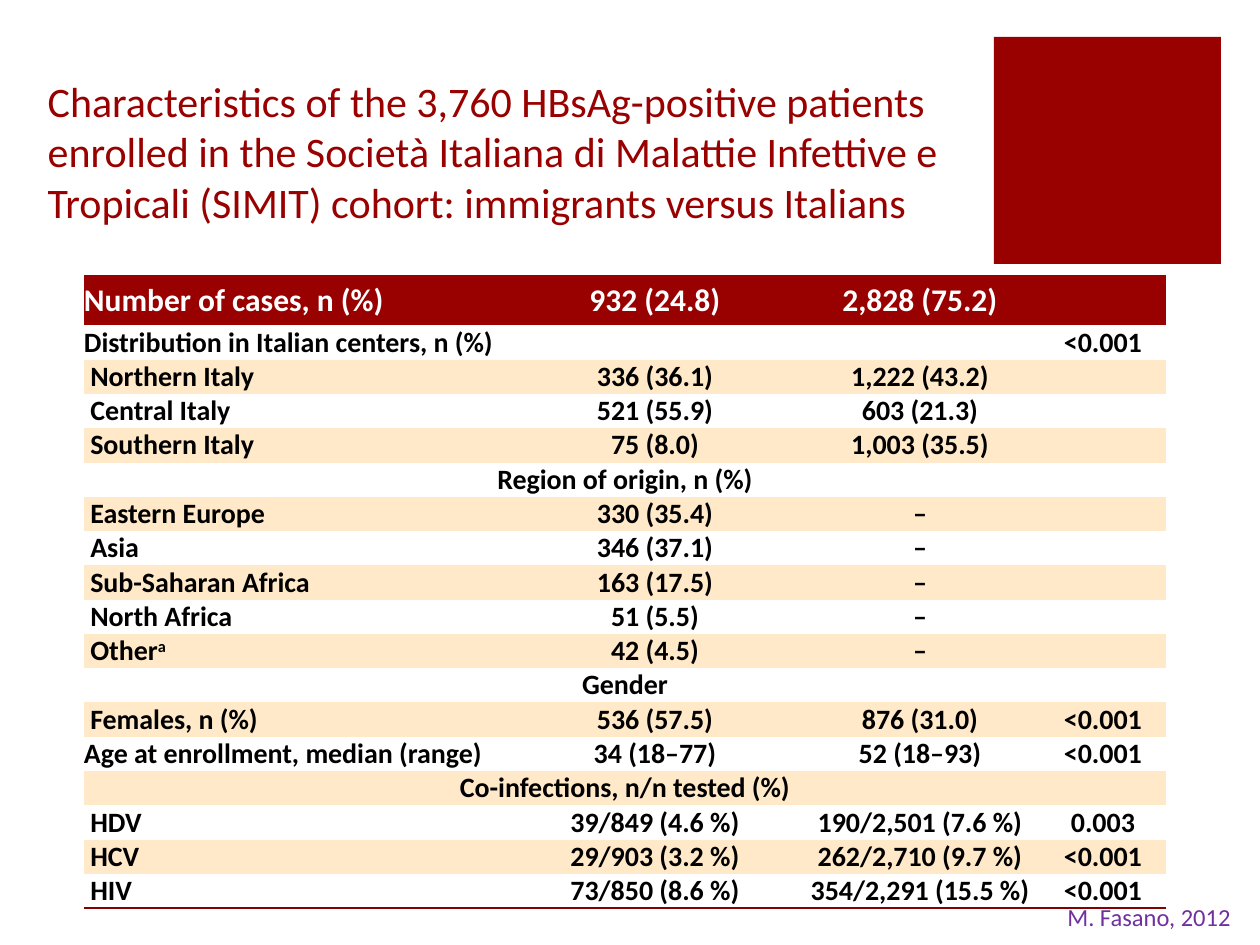
from dataclasses import dataclass
from typing import Any

from lxml import etree
from pptx import Presentation
from pptx import util as u
from pptx.dml.color import RGBColor
from pptx.enum import shapes, text
from pptx.oxml import ns

LEFT, MID = text.PP_ALIGN.LEFT, text.PP_ALIGN.CENTER
NO_STYLE = "{2D5ABB26-0587-4C30-8999-92F81FD0307C}"


@dataclass(frozen=True)
class Theme:
    face: str = "Calibri"
    red: str = "990000"
    rule: str = "820101"
    band: str = "FFE9C8"
    white: str = "FFFFFF"
    black: str = "000000"
    cite: str = "7030A0"
    title: int = 24
    head: int = 18
    body: int = 16
    note: int = 14


@dataclass(frozen=True)
class Box:
    x: int
    y: int
    w: int
    h: int


@dataclass(frozen=True)
class Row:
    label: str
    cases: str = ""
    peers: str = ""
    prob: str = ""
    mark: str = ""
    wide: bool = False


THEME = Theme()
COLS = (426, 290, 240, 126)
HEAD_H, ROW_H = 37, 30
PAD = 6
ROWS = (
    Row("Number of cases, n (%)", "932 (24.8)", "2,828 (75.2)"),
    Row("Distribution in Italian centers, n (%)", prob="<0.001"),
    Row(" Northern Italy", "336 (36.1)", "1,222 (43.2)"),
    Row(" Central Italy", "521 (55.9)", "603 (21.3)"),
    Row(" Southern Italy", "75 (8.0)", "1,003 (35.5)"),
    Row("Region of origin, n (%)", wide=True),
    Row(" Eastern Europe", "330 (35.4)", "–"),
    Row(" Asia", "346 (37.1)", "–"),
    Row(" Sub-Saharan Africa", "163 (17.5)", "–"),
    Row(" North Africa", "51 (5.5)", "–"),
    Row(" Other", "42 (4.5)", "–", mark="a"),
    Row("Gender", wide=True),
    Row(" Females, n (%)", "536 (57.5)", "876 (31.0)", "<0.001"),
    Row("Age at enrollment, median (range)", "34 (18–77)", "52 (18–93)", "<0.001"),
    Row("Co-infections, n/n tested (%)", wide=True),
    Row(" HDV", "39/849 (4.6 %)", "190/2,501 (7.6 %)", "0.003"),
    Row(" HCV", "29/903 (3.2 %)", "262/2,710 (9.7 %)", "<0.001"),
    Row(" HIV", "73/850 (8.6 %)", "354/2,291 (15.5 %)", "<0.001"),
)


def px(n: int) -> u.Emu:
    return u.Emu(round(n * 914400 / 126))


def put(obj: Any, **vals: Any) -> None:
    for key, val in vals.items():
        setattr(obj, key, val)


def place(shape: Any, box: Box) -> None:
    put(shape, left=px(box.x), top=px(box.y), width=px(box.w), height=px(box.h))


def paint(obj: Any, tint: str) -> None:
    obj.fill.solid()
    obj.fill.fore_color.rgb = RGBColor.from_string(tint)


def write(par: Any, words: str, size: int, tint: str, bold: bool = False) -> Any:
    run = par.add_run()
    run.text = words
    put(run.font, name=THEME.face, size=u.Pt(size), bold=bold)
    run.font.color.rgb = RGBColor.from_string(tint)
    return run


def raise_up(run: Any) -> None:
    """Turn the run into a superscript."""
    run.font._element.set("baseline", "30000")


def hold(par: Any, size: int) -> None:
    """Give an empty paragraph its type size, so that its row stays low."""
    end = etree.SubElement(par._p, ns.qn("a:endParaRPr"))
    end.set("sz", str(size * 100))


def underline(cell: Any) -> None:
    """Draw the closing rule below a cell."""
    line = etree.Element(ns.qn("a:lnB"), w=str(u.Pt(1)))
    fill = etree.SubElement(line, ns.qn("a:solidFill"))
    etree.SubElement(fill, ns.qn("a:srgbClr"), val=THEME.rule)
    cell._tc.get_or_add_tcPr().insert(0, line)


def draw_row(grid: Any, i: int, row: Row) -> None:
    head = i == 0
    size = THEME.head if head else THEME.body
    ink = THEME.white if head else THEME.black
    back = THEME.red if head else THEME.white if i % 2 else THEME.band
    pad = px(PAD if head else 0)
    grid.rows[i].height = px(HEAD_H if head else ROW_H)
    for j, words in enumerate((row.label, row.cases, row.peers, row.prob)):
        cell = grid.cell(i, j)
        put(cell, margin_left=0, margin_right=0, margin_top=pad,
            margin_bottom=pad, vertical_anchor=text.MSO_ANCHOR.MIDDLE)
        paint(cell, back)
        par = cell.text_frame.paragraphs[0]
        par.alignment = MID if j or row.wide else LEFT
        if words:
            write(par, words, size, ink, True)
        else:
            hold(par, size)
        if j == 0 and row.mark:
            raise_up(write(par, row.mark, size, ink, True))
        if i == len(ROWS) - 1:
            underline(cell)
    if row.wide:
        grid.cell(i, 0).merge(grid.cell(i, len(COLS) - 1))


def draw_table(slide: Any, x: int, y: int) -> None:
    high = HEAD_H + ROW_H * (len(ROWS) - 1)
    grid = slide.shapes.add_table(
        len(ROWS), len(COLS), px(x), px(y), px(sum(COLS)), px(high)).table
    put(grid, first_row=False, horz_banding=False)
    grid._tbl.tblPr.find(ns.qn("a:tableStyleId")).text = NO_STYLE
    for col, wide in zip(grid.columns, COLS):
        col.width = px(wide)
    for i, row in enumerate(ROWS):
        draw_row(grid, i, row)


def draw_block(slide: Any, box: Box) -> None:
    block = slide.shapes.add_shape(shapes.MSO_SHAPE.RECTANGLE, 0, 0, 0, 0)
    place(block, box)
    paint(block, THEME.red)
    block.line.fill.background()
    block.shadow.inherit = False


def draw_title(slide: Any, box: Box, words: str) -> None:
    title = slide.shapes.title
    place(title, box)
    put(title.text_frame, word_wrap=True, auto_size=text.MSO_AUTO_SIZE.NONE,
        vertical_anchor=text.MSO_ANCHOR.BOTTOM)
    par = title.text_frame.paragraphs[0]
    par.alignment = LEFT
    write(par, words, THEME.title, THEME.red)


def draw_cite(slide: Any, box: Box, words: str) -> None:
    note = slide.shapes.add_textbox(0, 0, 0, 0)
    place(note, box)
    put(note.text_frame, word_wrap=False,
        auto_size=text.MSO_AUTO_SIZE.SHAPE_TO_FIT_TEXT)
    write(note.text_frame.paragraphs[0], words, THEME.note, THEME.cite)


def main() -> None:
    deck = Presentation()
    put(deck, slide_width=px(1260), slide_height=px(945))
    slide = deck.slides.add_slide(deck.slide_layouts[5])
    draw_block(slide, Box(994, 37, 227, 227))
    draw_title(slide, Box(35, 76, 932, 157),
               "Characteristics of the 3,760 HBsAg-positive patients enrolled in "
               "the Società Italiana di Malattie Infettive e Tropicali (SIMIT) "
               "cohort: immigrants versus Italians")
    draw_table(slide, 84, 275)
    draw_cite(slide, Box(1055, 896, 190, 43), "M. Fasano, 2012")
    deck.save("out.pptx")


if __name__ == "__main__":
    main()
